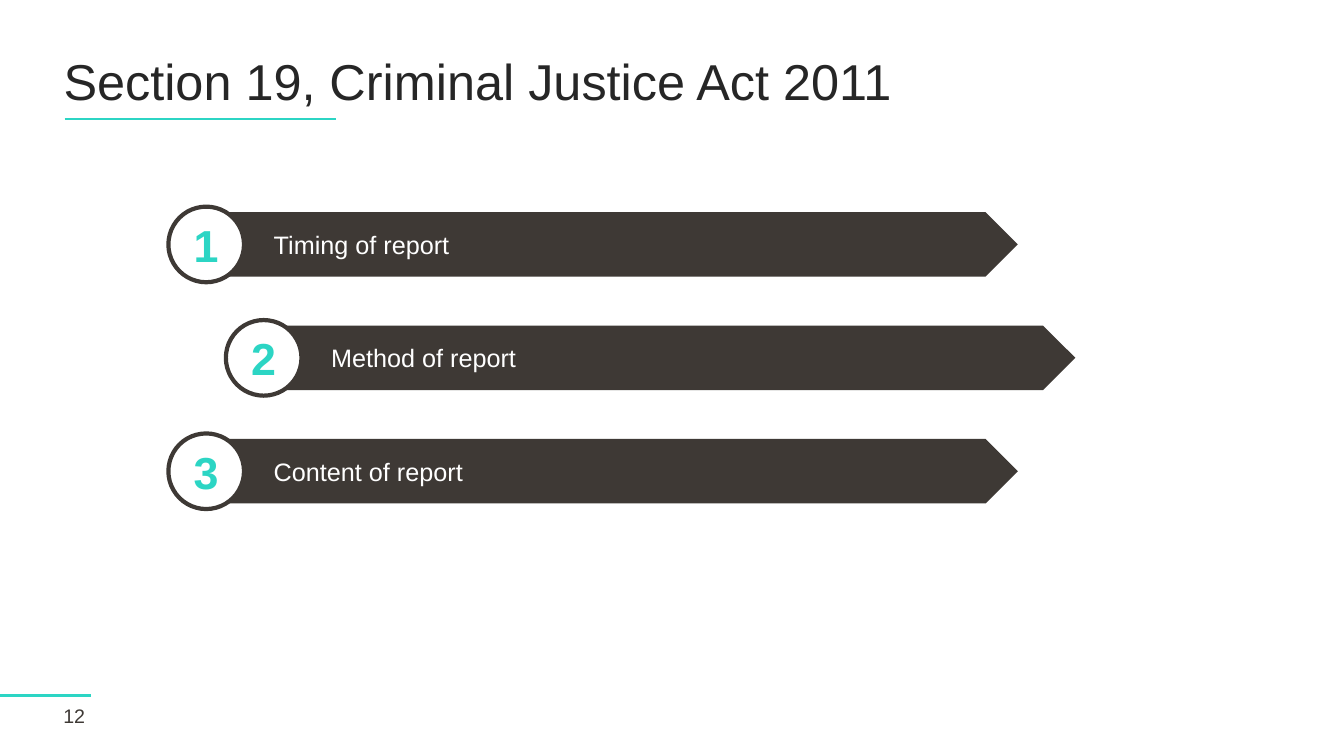
from lxml import etree
from pptx import Presentation
from pptx.dml.color import RGBColor
from pptx.enum.shapes import MSO_CONNECTOR, MSO_SHAPE
from pptx.enum.text import MSO_ANCHOR, PP_ALIGN
from pptx.oxml.ns import qn
from pptx.util import Inches, Pt

ARROW, CIRCLE = MSO_SHAPE.PENTAGON, MSO_SHAPE.OVAL
STRAIGHT = MSO_CONNECTOR.STRAIGHT
MIDDLE = MSO_ANCHOR.MIDDLE
LEFT, CENTER = PP_ALIGN.LEFT, PP_ALIGN.CENTER

FONT = "Arial"
COLORS = {
    "teal": "2CD5C4",
    "brown": "3E3935",
    "title": "262626",
    "white": "FFFFFF",
}

TOPICS = ["Timing of report", "Method of report", "Content of report"]
ROW_LEFT, ROW_TOP = 1.67, 2.05
ROW_PITCH, ROW_INDENT = 1.125, 0.57
CIRCLE_SIZE = 0.75
ARROW_WIDTH, ARROW_HEIGHT = 8.05, 0.64


def color(name):
    return RGBColor.from_string(COLORS[name])


def set_text(sp, text, size, fill, bold=False, align=LEFT, inset=0.1, spacing=1.0):
    """Write one formatted paragraph, centred vertically in its shape."""
    tf = sp.text_frame
    tf.word_wrap = True
    tf.vertical_anchor = MIDDLE
    tf.margin_left = Inches(inset)
    tf.margin_right = Inches(min(inset, 0.1))
    tf.margin_top = tf.margin_bottom = 0
    p = tf.paragraphs[0]
    p.alignment = align
    p.line_spacing = spacing
    r = p.add_run()
    r.text = text
    r.font.name = FONT
    r.font.size = Pt(size)
    r.font.bold = bold
    r.font.color.rgb = color(fill)


def place(sp, left, top, width, height):
    sp.left, sp.top = Inches(left), Inches(top)
    sp.width, sp.height = Inches(width), Inches(height)


def add_shape(shapes, kind, left, top, width, height, fill, outline=None):
    sp = shapes.add_shape(kind, Inches(left), Inches(top), Inches(width), Inches(height))
    sp.shadow.inherit = False
    sp.fill.solid()
    sp.fill.fore_color.rgb = color(fill)
    if outline:
        sp.line.color.rgb = color(outline)
        sp.line.width = Pt(3)
    else:
        sp.line.fill.background()
    return sp


def add_rule(slide, left, right, y):
    line = slide.shapes.add_connector(
        STRAIGHT, Inches(left), Inches(y), Inches(right), Inches(y))
    line.line.color.rgb = color("teal")
    line.line.width = Pt(1.5)
    etree.SubElement(line._element.spPr, qn("a:effectLst"))


def add_topic(slide, number, text, left, top):
    """Group an arrow bar with the numbered circle over its left end."""
    shapes = slide.shapes.add_group_shape().shapes
    arrow_top = top + (CIRCLE_SIZE - ARROW_HEIGHT) / 2
    arrow = add_shape(shapes, ARROW, left + CIRCLE_SIZE / 2, arrow_top,
                      ARROW_WIDTH, ARROW_HEIGHT, "brown")
    set_text(arrow, text, 18, "white", inset=0.67)
    circle = add_shape(shapes, CIRCLE, left, top, CIRCLE_SIZE, CIRCLE_SIZE,
                       "white", outline="brown")
    set_text(circle, str(number), 32, "teal", bold=True, align=CENTER, inset=0)


def main():
    prs = Presentation()
    prs.slide_width, prs.slide_height = Inches(13.33), Inches(7.5)
    slide = prs.slides.add_slide(prs.slide_layouts[5])

    # Title and its underline
    title = slide.shapes.title
    place(title, 0.53, 0.4, 12.24, 0.88)
    set_text(title, "Section 19, Criminal Justice Act 2011", 36, "title", spacing=0.9)
    add_rule(slide, 0.64, 3.33, 1.18)

    # Numbered arrows, every second one indented
    for i, topic in enumerate(TOPICS):
        add_topic(slide, i + 1, topic,
                  ROW_LEFT + i % 2 * ROW_INDENT, ROW_TOP + i * ROW_PITCH)

    # Page number
    add_rule(slide, 0, 0.9, 6.9)
    page = slide.shapes.add_textbox(Inches(0.53), Inches(6.98), Inches(0.57), Inches(0.24))
    set_text(page, "12", 14, "brown")

    prs.save("out.pptx")


if __name__ == "__main__":
    main()
